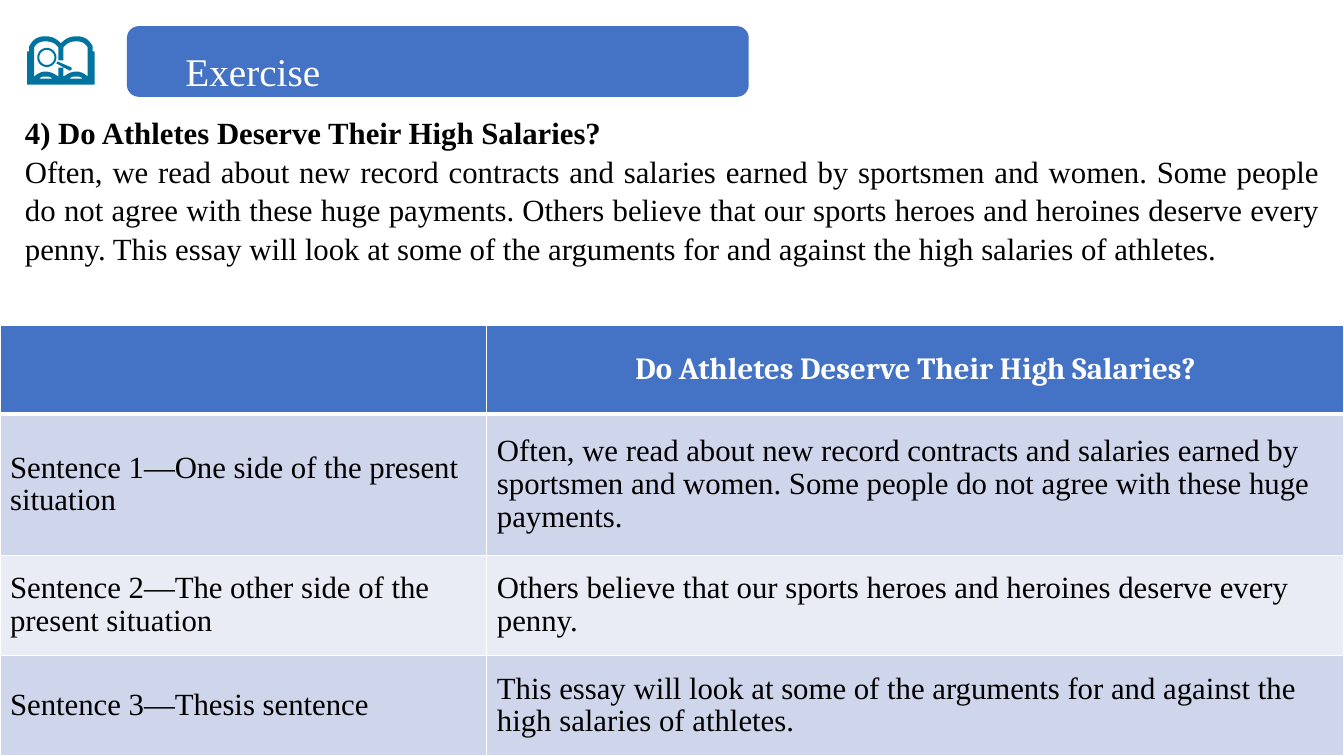
from math import cos, pi, sin

from lxml.etree import SubElement
from pptx import Presentation
from pptx.dml.color import RGBColor
from pptx.enum.shapes import MSO_SHAPE
from pptx.enum.text import MSO_ANCHOR, MSO_AUTO_SIZE, PP_ALIGN
from pptx.oxml.ns import qn
from pptx.util import Cm, Pt

TOPIC = "Do Athletes Deserve Their High Salaries?"
ONE_SIDE = ("Often, we read about new record contracts and salaries earned by "
            "sportsmen and women. Some people do not agree with these huge payments.")
OTHER_SIDE = "Others believe that our sports heroes and heroines deserve every penny."
THESIS = ("This essay will look at some of the arguments for and against "
          "the high salaries of athletes.")
OUTLINE = [
    ("", TOPIC),
    ("Sentence 1—One side of the present situation", ONE_SIDE),
    ("Sentence 2—The other side of the present situation", OTHER_SIDE),
    ("Sentence 3—Thesis sentence", THESIS),
]

# Book icon, in hundredths of an inch: a pair is a line end, six numbers a curve.
BOOK_MIDDLE = 60.5
COVER = [(60.5, 43), (56, 38, 51, 36, 45, 36), (39, 36, 33, 38, 29, 46),
         (29, 51), (27, 51), (27, 84)]
PAGE = [(58, 60), (58, 47), (55, 43, 51, 41, 45, 41), (40, 41, 36, 43, 34, 47),
        (34, 76), (36, 74, 40, 71, 45, 71), (51, 71, 55, 74, 58, 76), (58, 67)]
MOUND = [(39, 78), (41, 76, 43, 76, 45, 76), (48, 76, 50, 76, 52, 78)]
HANDLE = [(57, 61), (71, 67), (71, 67, 72, 70, 69, 70), (56, 63)]


def color(hex_code):
    return RGBColor.from_string(hex_code)


def flatten(outline, steps=8):
    """Turn lines and Bezier curves into a list of points."""
    points = [outline[0]]
    for part in outline[1:]:
        if len(part) == 2:
            points.append(part)
            continue
        controls = [points[-1], part[:2], part[2:4], part[4:]]
        for step in range(1, steps + 1):
            t = step / steps
            weights = ((1 - t) ** 3, 3 * t * (1 - t) ** 2, 3 * t * t * (1 - t), t ** 3)
            points.append(tuple(sum(w * c[axis] for w, c in zip(weights, controls))
                                for axis in (0, 1)))
    return points


def mirror(points):
    return [(2 * BOOK_MIDDLE - x, y) for x, y in reversed(points)]


def circle(x, y, radius, steps=36):
    angles = [2 * pi * step / steps for step in range(steps)]
    return [(x + radius * cos(a), y + radius * sin(a)) for a in angles]


class ExerciseSlide:
    FONT, HEADER_FONT = "Times New Roman", "Cambria"
    BLUE, TEAL, WHITE, BLACK = "4472C4", "00749F", "FFFFFF", "000000"
    BANDS = ("CFD5EA", "E9EBF5")
    TEXT_SIZE, TITLE_SIZE = 22, 28

    def __init__(self, presentation):
        self.slide = presentation.slides.add_slide(presentation.slide_layouts[5])
        self.shapes = self.slide.shapes

    def format(self, paragraph, size=TEXT_SIZE, ink=BLACK, bold=False, font=FONT,
               align=PP_ALIGN.LEFT, spacing=1.0):
        paragraph.alignment = align
        paragraph.line_spacing = spacing
        for run in paragraph.runs:
            run.font.name = font
            run.font.size = Pt(size)
            run.font.bold = bold
            run.font.color.rgb = color(ink)

    def paint(self, shape, fill):
        shape.shadow.inherit = False
        shape.fill.solid()
        shape.fill.fore_color.rgb = color(fill)
        shape.line.fill.background()

    def book_icon(self):
        cover, page, mound = flatten(COVER), flatten(PAGE), flatten(MOUND)
        contours = [cover + mirror(cover), page + mirror(page), mound, mirror(mound),
                    circle(46.5, 57, 9.5), circle(46.5, 57, 7.5), flatten(HANDLE)]
        contours = [[(10 * x, 10 * y) for x, y in contour] for contour in contours]
        builder = self.shapes.build_freeform(*contours[0][0], scale=Cm(2.54) / 1000)
        builder.add_line_segments(contours[0][1:])
        for contour in contours[1:]:
            builder.move_to(*contour[0])
            builder.add_line_segments(contour[1:])
        self.paint(builder.convert_to_shape(), self.TEAL)

    def banner(self, left, top, width, height):
        banner = self.shapes.add_shape(MSO_SHAPE.ROUNDED_RECTANGLE, Cm(left), Cm(top),
                                       Cm(width), Cm(height))
        self.paint(banner, self.BLUE)

    def title(self, text, left, top, width, height):
        """Place the title in front of what has been drawn so far."""
        title = self.shapes.title
        title.left, title.top = Cm(left), Cm(top)
        title.width, title.height = Cm(width), Cm(height)
        frame = title.text_frame
        frame.text = text
        frame.vertical_anchor = MSO_ANCHOR.TOP
        frame.auto_size = MSO_AUTO_SIZE.NONE
        self.format(frame.paragraphs[0], self.TITLE_SIZE, self.WHITE, spacing=1.3)
        frame.paragraphs[0].space_before = Pt(6)
        title.element.getparent().append(title.element)

    def passage(self, heading, body, left, top, width, height):
        frame = self.shapes.add_textbox(Cm(left), Cm(top), Cm(width),
                                        Cm(height)).text_frame
        frame.word_wrap = True
        frame.text = f"{heading}\n{body}"
        for paragraph, bold in zip(frame.paragraphs, (True, False)):
            self.format(paragraph, bold=bold, align=PP_ALIGN.JUSTIFY, spacing=1.05)

    def cell_borders(self, cell, bottom):
        properties = cell._tc.get_or_add_tcPr()
        for side, points in (("L", 1), ("R", 1), ("T", 1), ("B", bottom)):
            border = SubElement(properties, qn(f"a:ln{side}"), w=str(Pt(points)))
            fill = SubElement(border, qn("a:solidFill"))
            SubElement(fill, qn("a:srgbClr"), val=self.WHITE)

    def outline_table(self, rows, left, top, widths, heights):
        table = self.shapes.add_table(len(rows), len(widths), Cm(left), Cm(top),
                                      Cm(sum(widths)), Cm(sum(heights))).table
        table.horz_banding = False
        for column, width in zip(table.columns, widths):
            column.width = Cm(width)
        for index, (texts, height) in enumerate(zip(rows, heights)):
            table.rows[index].height = Cm(height)
            is_header = index == 0
            for cell, text in zip(table.rows[index].cells, texts):
                self.cell_borders(cell, bottom=3 if is_header else 1)
                cell.fill.solid()
                cell.fill.fore_color.rgb = color(
                    self.BLUE if is_header else self.BANDS[(index - 1) % 2])
                cell.vertical_anchor = MSO_ANCHOR.MIDDLE
                cell.text_frame.text = text
                paragraph = cell.text_frame.paragraphs[0]
                if is_header:
                    self.format(paragraph, ink=self.WHITE, bold=True,
                                font=self.HEADER_FONT, align=PP_ALIGN.CENTER)
                else:
                    self.format(paragraph, spacing=0.96)


def main():
    presentation = Presentation()
    presentation.slide_width, presentation.slide_height = Cm(33.87), Cm(19.05)
    exercise = ExerciseSlide(presentation)
    exercise.book_icon()
    exercise.banner(3.2, 0.66, 15.67, 1.78)
    exercise.title("Exercise", 4.42, 0.71, 15.09, 1.65)
    exercise.passage(f"4) {TOPIC}", f"{ONE_SIDE} {OTHER_SIDE} {THESIS}",
                     0.38, 2.69, 33.12, 4.01)
    exercise.outline_table(OUTLINE, 0, 8.2, widths=(12.27, 21.6),
                           heights=(2.24, 3.55, 2.53, 2.53))
    presentation.save("out.pptx")


if __name__ == "__main__":
    main()
